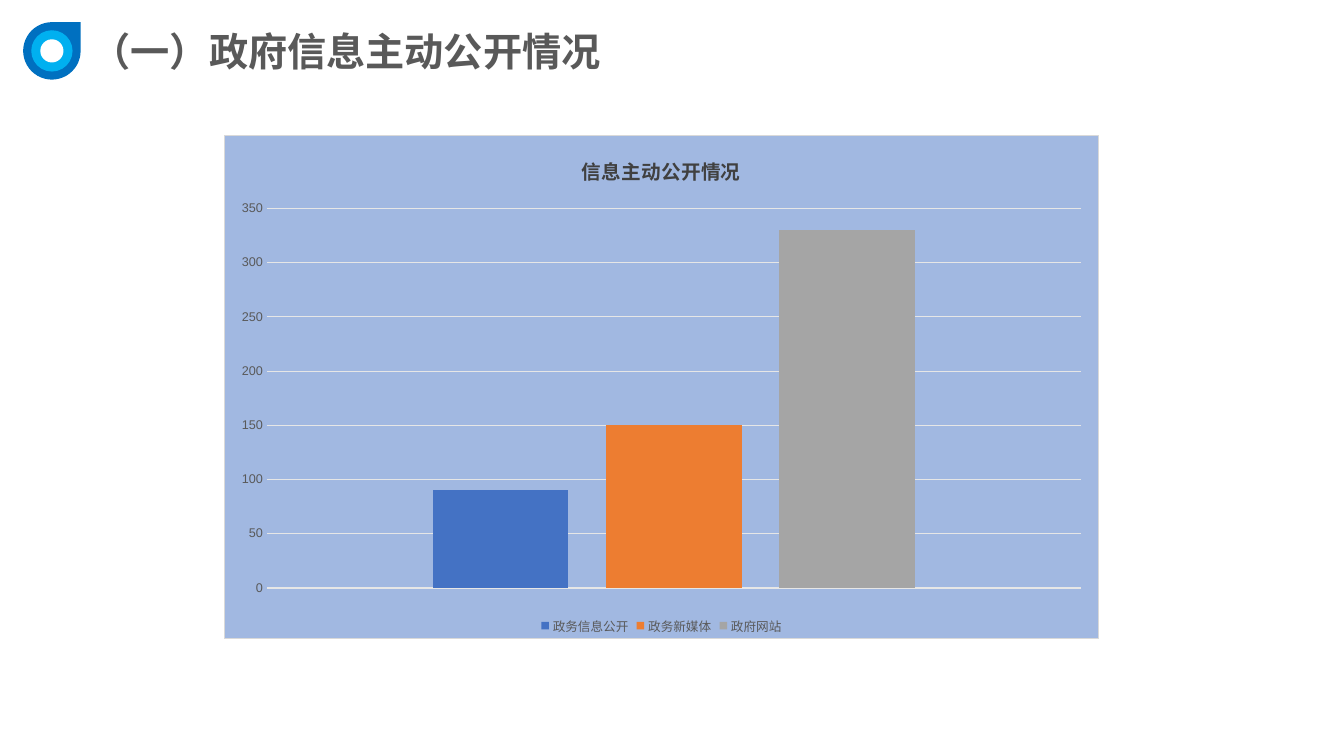
from lxml import etree
from pptx import Presentation
from pptx import util as u
from pptx.chart.data import CategoryChartData
from pptx.dml.color import RGBColor
from pptx.enum import chart as charts, shapes, text

DARK_BLUE = RGBColor(0x00, 0x70, 0xC0)
SKY_BLUE = RGBColor(0x00, 0xB0, 0xF0)
WHITE = RGBColor(0xFF, 0xFF, 0xFF)
TEXT_GREY = RGBColor(0x59, 0x59, 0x59)
TITLE_GREY = RGBColor(0x40, 0x40, 0x40)
GRID_GREY = RGBColor(0xE6, 0xE6, 0xE6)
BORDER_GREY = RGBColor(0xD9, 0xD9, 0xD9)
BAR_BLUE = RGBColor(0x44, 0x72, 0xC4)
BAR_ORANGE = RGBColor(0xED, 0x7D, 0x31)
BAR_GREY = RGBColor(0xA5, 0xA5, 0xA5)
BLACK = RGBColor(0, 0, 0)
FONT = "Arial"


def style_font(font, size, color, bold=False):
    font.name, font.size, font.bold = FONT, u.Pt(size), bold
    font.color.rgb = color


def write_text(frame, content, size=28, color=TEXT_GREY, bold=False):
    run = frame.paragraphs[0].add_run()
    run.text = content
    style_font(run.font, size, color, bold)


presentation = Presentation()
presentation.slide_width, presentation.slide_height = u.Inches(13.33), u.Inches(7.5)
slide = presentation.slides.add_slide(presentation.slide_layouts[6])

# Heading
heading = slide.shapes.add_textbox(u.Inches(0.81), u.Inches(0.22), u.Inches(5.31), u.Inches(0.57))
heading.text_frame.word_wrap = False
heading.text_frame.auto_size = text.MSO_AUTO_SIZE.SHAPE_TO_FIT_TEXT
write_text(heading.text_frame, "（一）政府信息主动公开情况", bold=True)

# Drop marker: concentric shapes around one centre
center_x, center_y = 0.515, 0.505
for kind, diameter, color in (
    (shapes.MSO_SHAPE.TEAR, 0.57, DARK_BLUE),
    (shapes.MSO_SHAPE.OVAL, 0.41, SKY_BLUE),
    (shapes.MSO_SHAPE.OVAL, 0.23, WHITE),
):
    shape = slide.shapes.add_shape(
        kind, u.Inches(center_x - diameter / 2), u.Inches(center_y - diameter / 2),
        u.Inches(diameter), u.Inches(diameter))
    shape.shadow.inherit = False
    shape.fill.solid()
    shape.fill.fore_color.rgb = color
    shape.line.fill.background()

# Column chart
series_rows = (
    ("政务信息公开", 90, BAR_BLUE),
    ("政务新媒体", 150, BAR_ORANGE),
    ("政府网站", 330, BAR_GREY),
)
chart_data = CategoryChartData()
chart_data.categories = ["1"]
for name, value, color in series_rows:
    chart_data.add_series(name, [value])
chart = slide.shapes.add_chart(
    charts.XL_CHART_TYPE.COLUMN_CLUSTERED, u.Inches(2.22), u.Inches(1.34),
    u.Inches(8.68), u.Inches(5), chart_data).chart
style_font(chart.font, 10, BLACK)
chart.has_title = True
write_text(chart.chart_title.text_frame, "信息主动公开情况", size=14, color=TITLE_GREY, bold=True)
chart.chart_title.include_in_layout = False

plot = chart.plots[0]
plot.vary_by_categories = False
plot.gap_width, plot.overlap = 246, -28
for series, (name, value, color) in zip(plot.series, series_rows):
    series.format.fill.solid()
    series.format.fill.fore_color.rgb = color

# Axes and legend
chart.category_axis.visible = False
value_axis = chart.value_axis
value_axis.minimum_scale, value_axis.maximum_scale, value_axis.major_unit = 0, 350, 50
value_axis.major_tick_mark = charts.XL_TICK_MARK.NONE
value_axis.format.line.fill.background()
value_axis.major_gridlines.format.line.color.rgb = GRID_GREY
value_axis.major_gridlines.format.line.width = u.Pt(0.75)
style_font(value_axis.tick_labels.font, 9, TEXT_GREY)
chart.has_legend = True
chart.legend.position = charts.XL_LEGEND_POSITION.BOTTOM
chart.legend.include_in_layout = False
style_font(chart.legend.font, 9, TEXT_GREY)

# Half-transparent chart background with a thin border
background = etree.fromstring(
    '<c:spPr xmlns:c="http://schemas.openxmlformats.org/drawingml/2006/chart" '
    'xmlns:a="http://schemas.openxmlformats.org/drawingml/2006/main">'
    f'<a:solidFill><a:srgbClr val="{BAR_BLUE}"><a:alpha val="50000"/></a:srgbClr></a:solidFill>'
    f'<a:ln w="{u.Pt(0.75)}"><a:solidFill><a:srgbClr val="{BORDER_GREY}"/></a:solidFill></a:ln>'
    '</c:spPr>')
chart.element.chart.addnext(background)

presentation.save("out.pptx")
